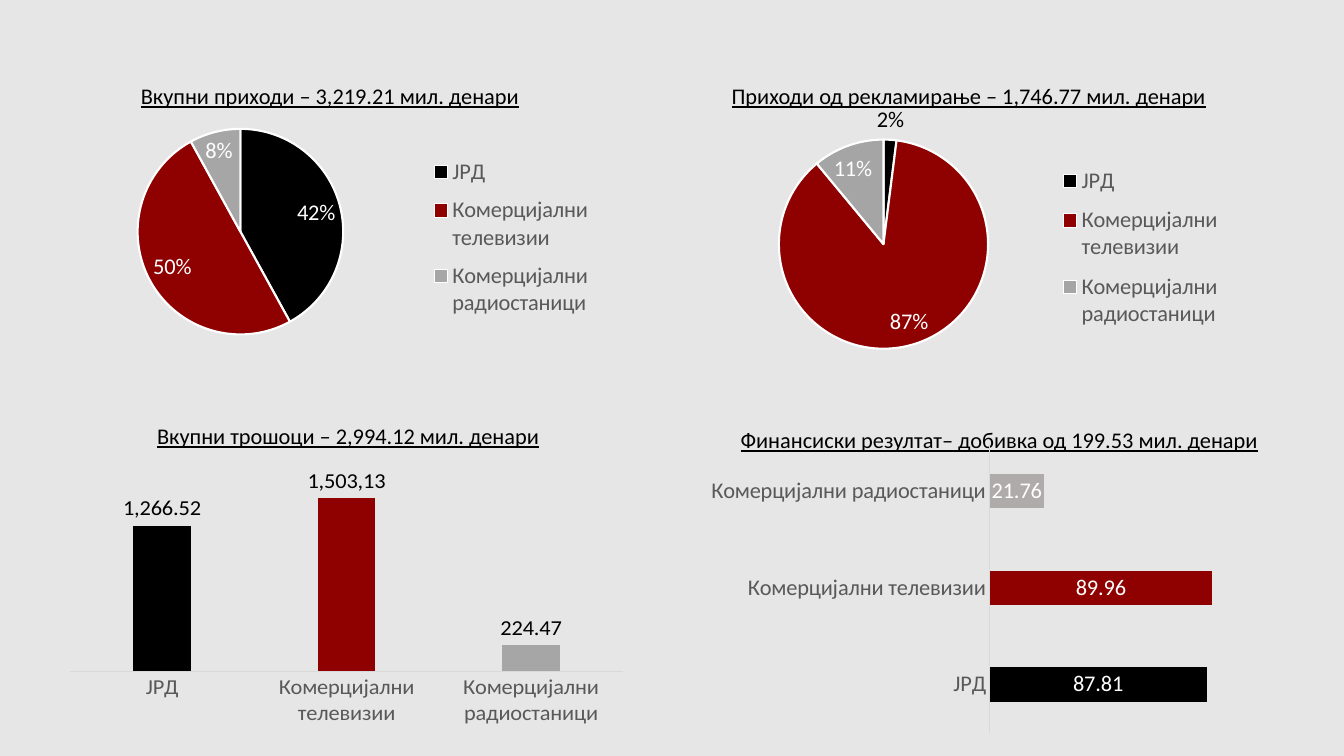
from lxml import etree
from pptx import Presentation
from pptx.chart.data import CategoryChartData
from pptx.dml.color import RGBColor
from pptx.enum.chart import XL_CHART_TYPE, XL_LABEL_POSITION, XL_LEGEND_POSITION, XL_TICK_MARK
from pptx.enum.text import MSO_AUTO_SIZE, PP_ALIGN
from pptx.oxml.ns import qn
from pptx.util import Cm, Pt

PIE, COLUMN, BAR = XL_CHART_TYPE.PIE, XL_CHART_TYPE.COLUMN_CLUSTERED, XL_CHART_TYPE.BAR_CLUSTERED
CENTER, BEST_FIT, OUTSIDE = (XL_LABEL_POSITION.CENTER, XL_LABEL_POSITION.BEST_FIT,
                             XL_LABEL_POSITION.OUTSIDE_END)
LEGEND_RIGHT = XL_LEGEND_POSITION.RIGHT
NO_TICK = XL_TICK_MARK.NONE
LEFT_ALIGN, CENTER_ALIGN = PP_ALIGN.LEFT, PP_ALIGN.CENTER
FIT_TEXT = MSO_AUTO_SIZE.SHAPE_TO_FIT_TEXT

BACKGROUND = RGBColor(0xE7, 0xE6, 0xE6)
BLACK = RGBColor(0x00, 0x00, 0x00)
WHITE = RGBColor(0xFF, 0xFF, 0xFF)
DARK_RED = RGBColor(0x8F, 0x00, 0x00)
GREY = RGBColor(0xA6, 0xA6, 0xA6)
MID_GREY = RGBColor(0xA5, 0xA5, 0xA5)
WARM_GREY = RGBColor(0xAF, 0xAB, 0xAB)
TEXT_GREY = RGBColor(0x59, 0x59, 0x59)
AXIS_GREY = RGBColor(0xD9, 0xD9, 0xD9)

FONT = "Calibri"
NUMBER_FORMAT = "#,##0.00"
CATEGORIES = ["ЈРД", "Комерцијални телевизии", "Комерцијални радиостаници"]


def set_font(font, color, size=16):
    font.name = FONT
    font.size = Pt(size)
    font.color.rgb = color


def add_heading(slide, text, left, top, width, align=LEFT_ALIGN):
    tf = slide.shapes.add_textbox(Cm(left), Cm(top), Cm(width), Cm(0.94)).text_frame
    tf.word_wrap = True
    tf.auto_size = FIT_TEXT
    p = tf.paragraphs[0]
    p.text = text
    p.alignment = align
    set_font(p.font, BLACK)
    p.font.underline = True


def add_chart(slide, kind, box, values, last_color):
    """Add a one-series chart whose points are black, red and a grey."""
    data = CategoryChartData(number_format=NUMBER_FORMAT)
    data.categories = CATEGORIES
    data.add_series("Series 1", values)
    chart = slide.shapes.add_chart(kind, *map(Cm, box), data).chart
    chart.has_title = False
    chart.has_legend = False
    set_font(chart.font, BLACK, 10)
    series = chart.plots[0].series[0]
    for i, color in enumerate((BLACK, DARK_RED, last_color)):
        fill = series.points[i].format.fill
        fill.solid()
        fill.fore_color.rgb = color
    return chart


def place(parent, index, x, y, w, h, inner=False):
    """Give a chart part a manual layout, in fractions of the chart."""
    for old in parent.findall(qn("c:layout")):
        parent.remove(old)
    layout = etree.Element(qn("c:layout"))
    manual = etree.SubElement(layout, qn("c:manualLayout"))
    settings = [("layoutTarget", "inner")] if inner else []
    settings += [("xMode", "edge"), ("yMode", "edge"), ("x", x), ("y", y), ("w", w), ("h", h)]
    for tag, value in settings:
        etree.SubElement(manual, qn(f"c:{tag}")).set("val", str(value))
    parent.insert(index, layout)


def add_pie(slide, box, values, last_color, plot_box, legend_box, outside=()):
    chart = add_chart(slide, PIE, box, values, last_color)
    plot = chart.plots[0]
    plot.vary_by_categories = True
    series = plot.series[0]
    labels = series.data_labels
    labels.show_value = False
    labels.show_percentage = True
    labels.number_format = "0%"
    labels.number_format_is_linked = False
    set_font(labels.font, WHITE)
    for i in range(len(values)):
        point = series.points[i]
        point.format.line.color.rgb = WHITE
        point.format.line.width = Pt(1.5)
        label = point.data_label
        set_font(label.font, BLACK if i in outside else WHITE)
        label.position = OUTSIDE if i in outside else BEST_FIT
    for label in series._element.iter(qn("c:dLbl")):
        label.find(qn("c:showVal")).set("val", "0")
        label.find(qn("c:showPercent")).set("val", "1")

    chart.has_legend = True
    legend = chart.legend
    legend.position = LEGEND_RIGHT
    legend.include_in_layout = False
    set_font(legend.font, TEXT_GREY)
    place(legend._element, 1, *legend_box)
    place(chart._chartSpace.find(".//" + qn("c:plotArea")), 0, *plot_box, inner=True)


def add_bars(slide, kind, box, values, last_color, maximum, gap, overlap,
             label_color, label_position, label_texts=None):
    chart = add_chart(slide, kind, box, values, last_color)
    plot = chart.plots[0]
    plot.vary_by_categories = False
    plot.gap_width = gap
    plot.overlap = overlap
    series = plot.series[0]
    series.format.fill.solid()
    series.format.fill.fore_color.rgb = BLACK
    series.invert_if_negative = False

    labels = series.data_labels
    labels.show_value = True
    labels.number_format = NUMBER_FORMAT
    labels.number_format_is_linked = False
    labels.position = label_position
    set_font(labels.font, label_color)
    for i, text in (label_texts or {}).items():
        label = series.points[i].data_label
        p = label.text_frame.paragraphs[0]
        r = p.add_run()
        r.text = text
        set_font(r.font, label_color)
        label.position = label_position

    axis = chart.category_axis
    axis.major_tick_mark = axis.minor_tick_mark = NO_TICK
    axis.format.line.color.rgb = AXIS_GREY
    axis.format.line.width = Pt(0.75)
    set_font(axis.tick_labels.font, TEXT_GREY)
    value_axis = chart.value_axis
    value_axis.has_major_gridlines = False
    value_axis.minimum_scale = 0
    value_axis.maximum_scale = maximum
    value_axis.visible = False


def main():
    prs = Presentation()
    prs.slide_width, prs.slide_height = Cm(33.87), Cm(19.05)
    s = prs.slides.add_slide(prs.slide_layouts[6])
    s.background.fill.solid()
    s.background.fill.fore_color.rgb = BACKGROUND

    add_pie(s, (1.24, 2.41, 14.83, 7.62), (42, 50, 8), GREY,
            plot_box=(0.15, 0.11, 0.35, 0.68), legend_box=(0.62, 0.17, 0.33, 0.6))
    add_heading(s, "Вкупни приходи – 3,219.21 мил. денари", 3.3, 1.94, 11.68)

    add_pie(s, (17.37, 1.73, 15.06, 8.76), (2, 87, 11), MID_GREY,
            plot_box=(0.15, 0.2, 0.35, 0.61), legend_box=(0.59, 0.25, 0.33, 0.53),
            outside=(0,))
    add_heading(s, "Приходи од рекламирање – 1,746.77 мил. денари",
                17.38, 1.94, 14.07, CENTER_ALIGN)

    add_bars(s, COLUMN, (1.47, 11.81, 14.53, 6.63), (1266.52, 1503.12, 224.46), GREY,
             maximum=1600, gap=219, overlap=-27, label_color=BLACK,
             label_position=OUTSIDE, label_texts={1: "1,503,13", 2: "224.47"})
    add_heading(s, "Финансиски резултат– добивка од 199.53 мил. денари",
                17.07, 10.62, 16.23, CENTER_ALIGN)
    add_heading(s, "Вкупни трошоци – 2,994.12 мил. денари", 3.71, 10.52, 11.68)

    add_bars(s, BAR, (17.65, 11, 13.79, 7.62), (87.81, 89.96, 21.76), WARM_GREY,
             maximum=100, gap=182, overlap=0, label_color=WHITE, label_position=CENTER)

    prs.save("out.pptx")


if __name__ == "__main__":
    main()
